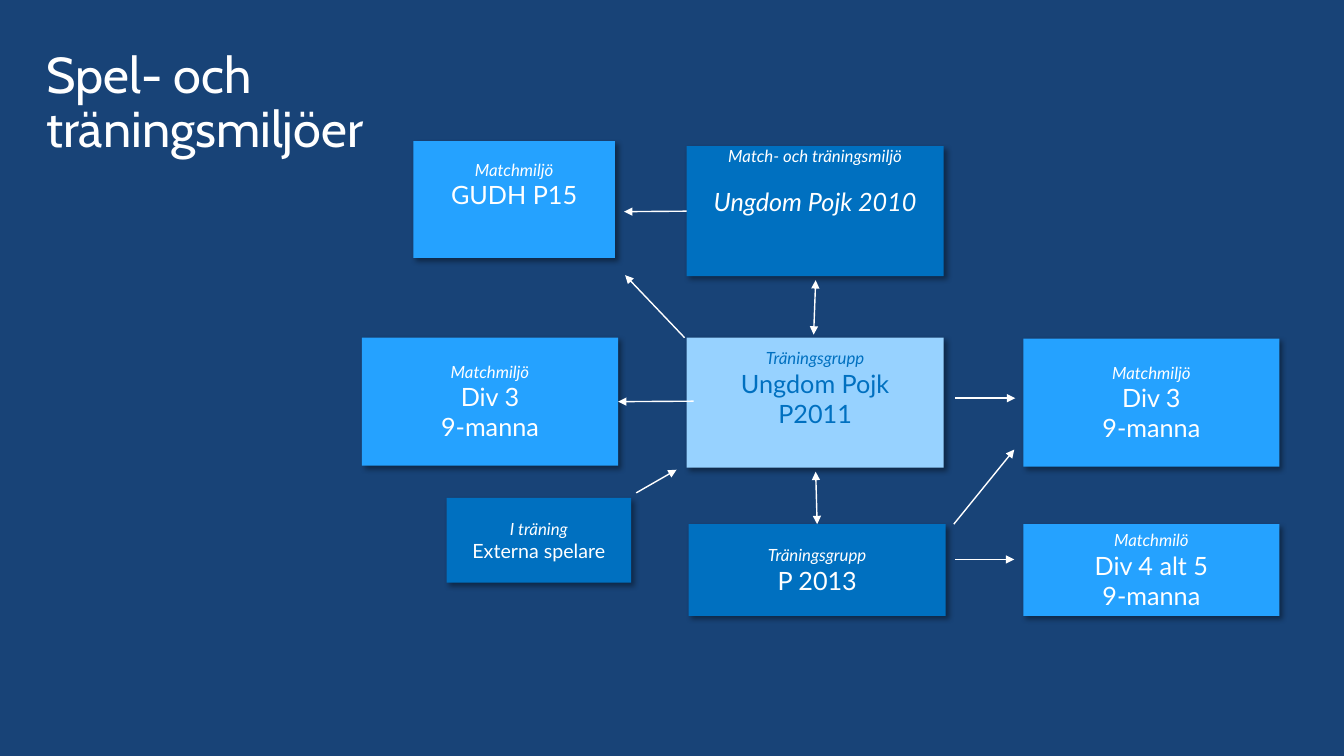
"""Build the slide about match and training environments."""
import pptx
import pptx.dml.color
import pptx.enum.shapes
import pptx.enum.text
import pptx.oxml
import pptx.oxml.ns
import pptx.util
from pptx.util import Inches

NAVY = pptx.dml.color.RGBColor(0x18, 0x43, 0x77)
BLUE = pptx.dml.color.RGBColor(0x00, 0x70, 0xC0)
BRIGHT = pptx.dml.color.RGBColor(0x25, 0xA2, 0xFF)
PALE = pptx.dml.color.RGBColor(0x97, 0xD2, 0xFF)
WHITE = pptx.dml.color.RGBColor(0xFF, 0xFF, 0xFF)

SHADOW = (
    '<a:outerShdw %s blurRad="50800" dist="38100" dir="2700000" algn="tl" rotWithShape="0">'
    '<a:srgbClr val="000000"><a:alpha val="40000"/></a:srgbClr></a:outerShdw>'
) % pptx.oxml.ns.nsdecls("a")

NINE_A_SIDE = ("Div 3", "9-manna")
BOXES = {
    "youth_2010": ((6.81, 1.45, 2.55, 1.29), BLUE, "Match- och träningsmiljö", ("Ungdom Pojk 2010",),
                   {"top": 0, "italic": True, "gap": 14.4}),
    "right_division_3": ((10.15, 3.36, 2.54, 1.27), BRIGHT, "Matchmiljö", NINE_A_SIDE, {}),
    "p15": ((4.1, 1.4, 2, 1.16), BRIGHT, "Matchmiljö", ("GUDH P15",), {"top": 0.18}),
    "youth_2011": ((6.81, 3.35, 2.55, 1.29), PALE, "Träningsgrupp", ("Ungdom Pojk", "P2011"),
                   {"top": 0.1, "color": BLUE}),
    "p2013": ((6.83, 5.2, 2.55, 0.91), BLUE, "Träningsgrupp", ("P 2013",), {}),
    "external": ((4.43, 4.94, 1.83, 0.84), BLUE, "I träning", ("Externa spelare",), {"size": 14}),
    "division_4": ((10.15, 5.2, 2.54, 0.91), BRIGHT, "Matchmilö", ("Div 4 alt 5", "9-manna"), {}),
    "left_division_3": ((3.59, 3.35, 2.54, 1.27), BRIGHT, "Matchmiljö", NINE_A_SIDE, {}),
}


def write_text(paragraph, text, size=18, font="Lato", color=WHITE, italic=False,
               align=pptx.enum.text.PP_ALIGN.CENTER, before=0, line_spacing=None):
    """Fill a paragraph with formatted text."""
    paragraph.text = text
    paragraph.alignment = align
    paragraph.line_spacing = line_spacing
    if before:
        paragraph.space_before = pptx.util.Pt(before)
    for run in paragraph.runs:
        run.font.name = font
        run.font.size = pptx.util.Pt(size)
        run.font.italic = italic
        run.font.color.rgb = color


def add_title(slide, text):
    """Add the slide title."""
    box = slide.shapes.add_textbox(Inches(0.36), Inches(0.31), Inches(3.74), Inches(1.45))
    frame = box.text_frame
    frame.word_wrap = True
    frame.vertical_anchor = pptx.enum.text.MSO_ANCHOR.MIDDLE
    write_text(frame.paragraphs[0], text, size=36, font="Cabin",
               align=pptx.enum.text.PP_ALIGN.LEFT, line_spacing=0.9)


def add_box(slide, place, fill, caption, lines, top=None, size=18, color=WHITE, italic=False, gap=0):
    """Add a shadowed rectangle with an italic caption above its name lines."""
    shape = slide.shapes.add_shape(pptx.enum.shapes.MSO_SHAPE.RECTANGLE, *map(Inches, place))
    shape.fill.solid()
    shape.fill.fore_color.rgb = fill
    shape.line.fill.background()
    shape.shadow.inherit = False
    effects = shape._element.spPr.find(pptx.oxml.ns.qn("a:effectLst"))
    effects.append(pptx.oxml.parse_xml(SHADOW))
    frame = shape.text_frame
    frame.word_wrap = True
    frame.vertical_anchor = pptx.enum.text.MSO_ANCHOR.MIDDLE
    if top is not None:
        frame.vertical_anchor = pptx.enum.text.MSO_ANCHOR.TOP
        frame.margin_top = Inches(top)
    write_text(frame.paragraphs[0], caption, size=12, color=color, italic=True)
    for index, line in enumerate(lines):
        write_text(frame.add_paragraph(), line, size=size, color=color, italic=italic,
                   before=0 if index else gap)
    return shape


def add_arrow(slide, start, end, both=False, begin_at=None, end_at=None):
    """Add a white arrow, joined to the given box sides if any."""
    connector = slide.shapes.add_connector(
        pptx.enum.shapes.MSO_CONNECTOR.STRAIGHT, *map(Inches, start + end))
    connector.line.color.rgb = WHITE
    connector.line.width = pptx.util.Pt(1)
    line = connector.line._get_or_add_ln()
    for tag in ("headEnd", "tailEnd") if both else ("tailEnd",):
        pptx.oxml.xmlchemy.OxmlElement("a:" + tag)
        line.append(pptx.oxml.parse_xml(
            '<a:%s %s type="triangle"/>' % (tag, pptx.oxml.ns.nsdecls("a"))))
    connector._element.spPr.append(
        pptx.oxml.parse_xml("<a:effectLst %s/>" % pptx.oxml.ns.nsdecls("a")))
    if begin_at:
        connector.begin_connect(*begin_at)
    if end_at:
        connector.end_connect(*end_at)


def main():
    """Create and save the presentation."""
    presentation = pptx.Presentation()
    presentation.slide_width = Inches(13.33)
    presentation.slide_height = Inches(7.5)
    slide = presentation.slides.add_slide(presentation.slide_layouts[6])
    slide.background.fill.solid()
    slide.background.fill.fore_color.rgb = NAVY

    add_title(slide, "Spel- och\vträningsmiljöer")
    boxes = {name: add_box(slide, place, fill, caption, lines, **options)
             for name, (place, fill, caption, lines, options) in BOXES.items()}

    add_arrow(slide, (8.09, 2.78), (8.07, 3.32), both=True)
    add_arrow(slide, (8.09, 4.68), (8.08, 5.2), both=True, end_at=(boxes["p2013"], 0))
    add_arrow(slide, (6.83, 2.1), (6.19, 2.1), begin_at=(boxes["youth_2010"], 1))
    add_arrow(slide, (6.88, 3.98), (6.15, 3.98), end_at=(boxes["left_division_3"], 3))
    add_arrow(slide, (6.79, 3.35), (6.2, 2.73))
    add_arrow(slide, (6.31, 4.89), (6.71, 4.66))
    add_arrow(slide, (9.47, 3.95), (10.07, 3.95))
    add_arrow(slide, (9.46, 5.2), (10.06, 4.46))
    add_arrow(slide, (9.47, 5.55), (10.06, 5.55))
    presentation.save("out.pptx")


if __name__ == "__main__":
    main()
